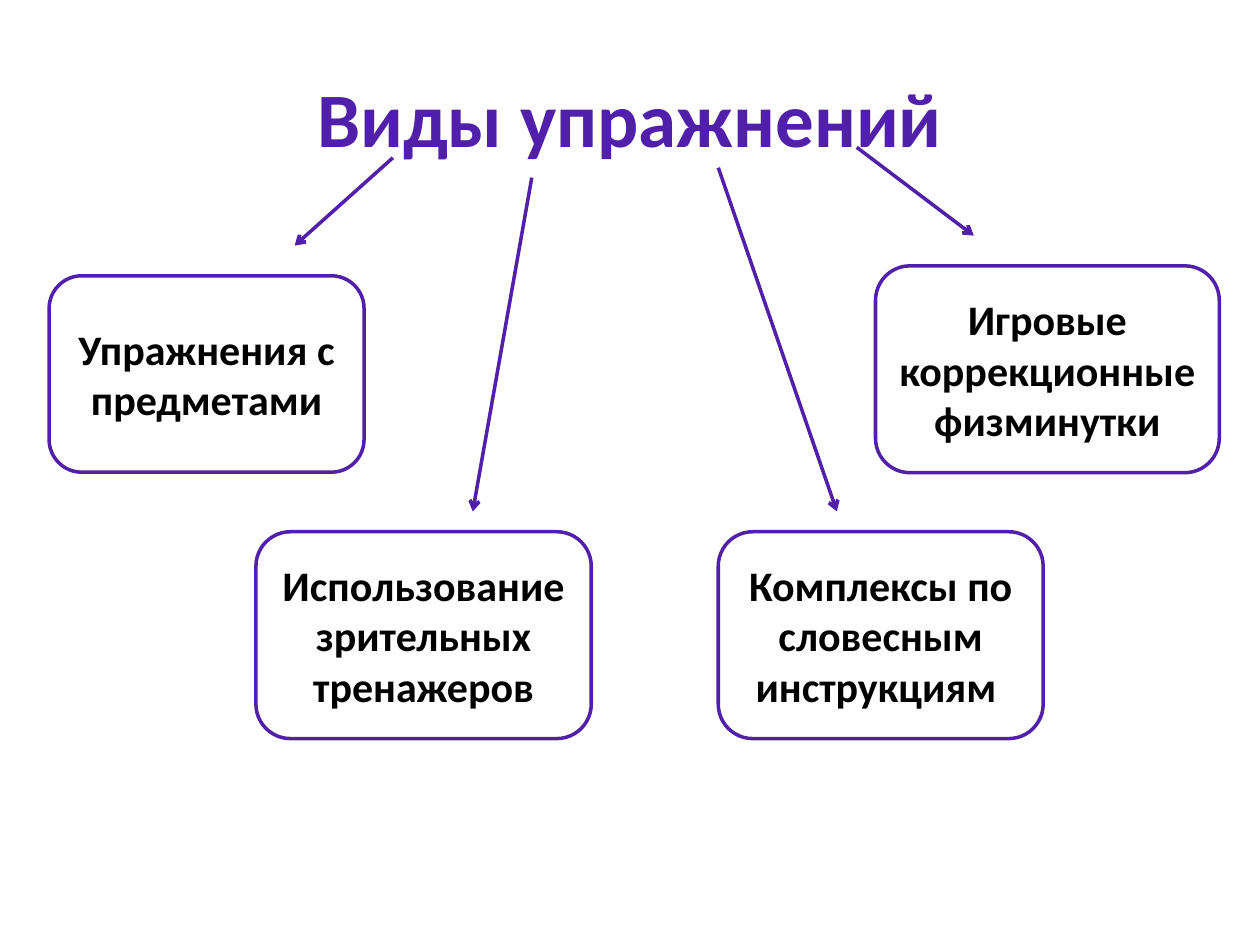
"""Build a slide that shows four kinds of exercises branching from a title."""
from lxml import etree
from pptx import Presentation
from pptx import util as u
from pptx.dml.color import RGBColor
from pptx.enum import shapes, text
from pptx.oxml.ns import qn

COLORS = {"violet": "5120AA", "white": "FFFFFF", "black": "000000"}


def write(frame, wording, size, color):
    frame.word_wrap = True
    frame.vertical_anchor = text.MSO_ANCHOR.MIDDLE
    paragraph = frame.paragraphs[0]
    paragraph.text = wording
    paragraph.alignment = text.PP_ALIGN.CENTER
    paragraph.font.name = "Calibri"
    paragraph.font.size = u.Pt(size)
    paragraph.font.bold = True
    paragraph.font.color.rgb = RGBColor.from_string(COLORS[color])


def outline(line):
    line.color.rgb = RGBColor.from_string(COLORS["violet"])
    line.width = u.Pt(2)


deck = Presentation()
deck.slide_width, deck.slide_height = u.Cm(25.4), u.Cm(19.05)
slide = deck.slides.add_slide(deck.slide_layouts[6])

title = slide.shapes.add_textbox(u.Cm(1.27), u.Cm(0.76), u.Cm(22.86), u.Cm(3.18))
write(title.text_frame, "Виды упражнений", 44, "violet")

exercises = [
    ("Упражнения с предметами", 0.99, 5.56, 6.35, 3.96),
    ("Использование зрительных тренажеров", 5.16, 10.72, 6.76, 4.17),
    ("Комплексы по словесным инструкциям ", 14.48, 10.72, 6.55, 4.17),
    ("Игровые коррекционные физминутки", 17.65, 5.36, 6.93, 4.17),
]
for wording, *place in exercises:
    exercise = slide.shapes.add_shape(
        shapes.MSO_SHAPE.FLOWCHART_ALTERNATE_PROCESS, *map(u.Cm, place))
    exercise.shadow.inherit = False
    exercise.fill.solid()
    exercise.fill.fore_color.rgb = RGBColor.from_string(COLORS["white"])
    outline(exercise.line)
    write(exercise.text_frame, wording, 24, "black")

branches = [
    (7.92, 3.18, 5.94, 4.95),
    (10.72, 3.58, 9.53, 10.31),
    (14.48, 3.38, 16.87, 10.31),
    (17.27, 2.97, 19.63, 4.75),
]
for ends in branches:
    branch = slide.shapes.add_connector(
        shapes.MSO_CONNECTOR.STRAIGHT, *map(u.Cm, ends))
    outline(branch.line)
    etree.SubElement(branch.line._get_or_add_ln(), qn("a:tailEnd"), type="arrow")
    etree.SubElement(branch._element.spPr, qn("a:effectLst"))

deck.save("out.pptx")
